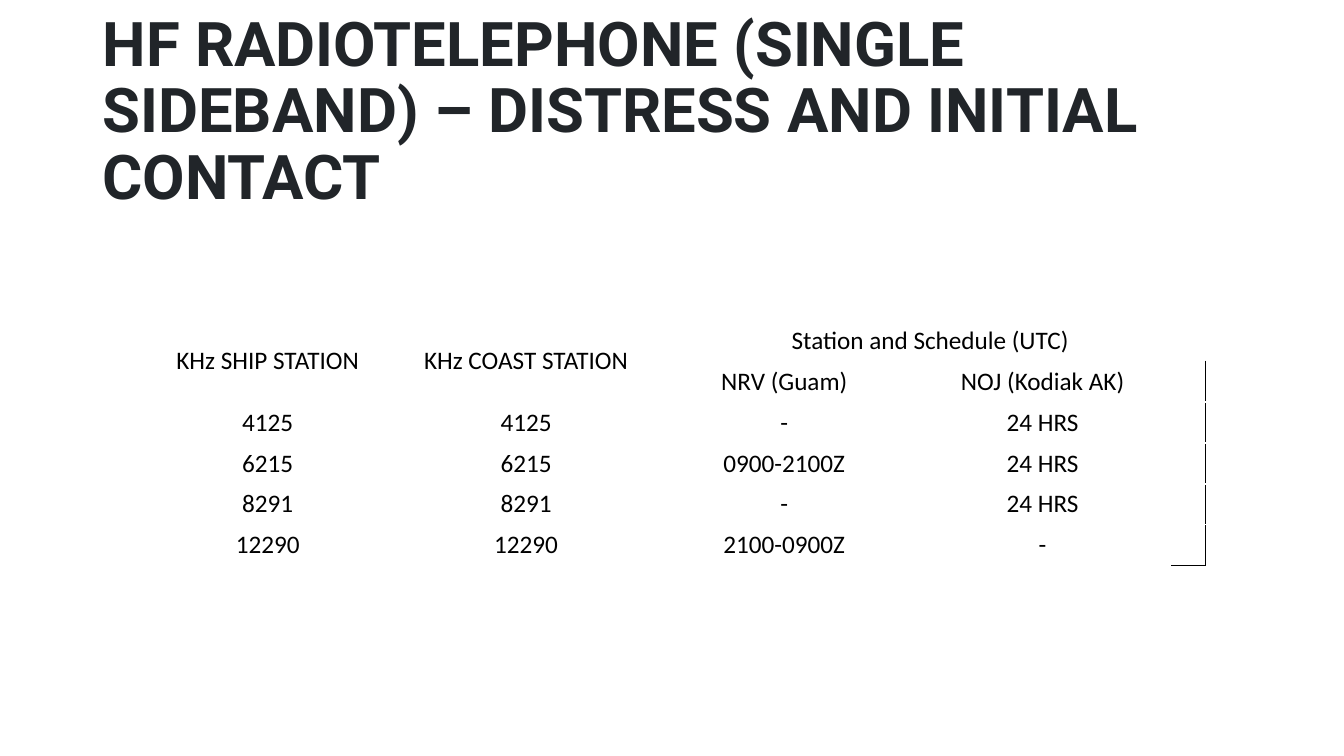
from lxml.etree import SubElement
from pptx import Presentation
from pptx.dml.color import RGBColor
from pptx.enum.text import MSO_ANCHOR, MSO_AUTO_SIZE, PP_ALIGN
from pptx.oxml.ns import qn
from pptx.util import Pt

COLORS = {"heading": "212529", "text": "000000", "cell": "FFFFFF", "border": "000000"}
HEADING_FONT = {"name": "Roboto", "size": Pt(44), "bold": True}
CELL_FONT = {"name": "Calibri", "size": Pt(18), "bold": False}

SCHEDULE = [
    ["KHz SHIP STATION", "KHz COAST STATION", "Station and Schedule (UTC)", "", ""],
    ["", "", "NRV (Guam)", "NOJ (Kodiak AK)", ""],
    ["4125", "4125", "-", "24 HRS", ""],
    ["6215", "6215", "0900-2100Z", "24 HRS", ""],
    ["8291", "8291", "-", "24 HRS", ""],
    ["12290", "12290", "2100-0900Z", "-", ""],
]
HEADER_ROWS = 2
MERGES = [((0, 0), (1, 0)), ((0, 1), (1, 1)), ((0, 2), (0, 4))]


class SlideBuilder:
    SCALE = 9525  # EMU per px, 96 px to the inch

    def __init__(self, width, height):
        self.deck = Presentation()
        self.deck.slide_width, self.deck.slide_height = self.px(width), self.px(height)
        self.slide = self.deck.slides.add_slide(self.deck.slide_layouts[5])

    def px(self, length):
        return length * self.SCALE

    def apply(self, target, values):
        for key, value in values.items():
            setattr(target, key, value)

    def style_font(self, font, values, color):
        self.apply(font, values)
        font.color.rgb = RGBColor.from_string(COLORS[color])

    def heading(self, text, left, top, width, height):
        title = self.slide.shapes.title
        self.apply(title, {"left": self.px(left), "top": self.px(top),
                           "width": self.px(width), "height": self.px(height)})
        self.apply(title.text_frame, {"text": text, "word_wrap": True,
                                      "auto_size": MSO_AUTO_SIZE.NONE,
                                      "vertical_anchor": MSO_ANCHOR.MIDDLE})
        paragraph = title.text_frame.paragraphs[0]
        self.apply(paragraph, {"alignment": PP_ALIGN.LEFT, "line_spacing": 0.9})
        self.style_font(paragraph.runs[0].font, HEADING_FONT, "heading")

    def border(self, cell, sides):
        properties = cell._tc.get_or_add_tcPr()
        for position, side in enumerate(sides):
            line = SubElement(properties, qn(f"a:{side}"), w=str(Pt(1)))
            fill = SubElement(line, qn("a:solidFill"))
            SubElement(fill, qn("a:srgbClr"), val=COLORS["border"])
            properties.insert(position, line)

    def fill_cell(self, cell, text, anchor):
        cell.text = text
        cell.vertical_anchor = anchor
        cell.fill.solid()
        cell.fill.fore_color.rgb = RGBColor.from_string(COLORS["cell"])
        paragraph = cell.text_frame.paragraphs[0]
        paragraph.alignment = PP_ALIGN.CENTER
        self.style_font(paragraph.font, CELL_FONT, "text")
        for run in paragraph.runs:
            self.style_font(run.font, CELL_FONT, "text")

    def table(self, rows, merges, left, top, widths, row_height):
        table = self.slide.shapes.add_table(
            len(rows), len(widths), self.px(left), self.px(top),
            self.px(sum(widths)), self.px(row_height * len(rows))).table
        self.apply(table, {"first_row": False, "horz_banding": False})
        for column, width in zip(table.columns, widths):
            column.width = self.px(width)
        for row_index, row in enumerate(rows):
            table.rows[row_index].height = self.px(row_height)
            anchor = MSO_ANCHOR.MIDDLE if row_index < HEADER_ROWS else MSO_ANCHOR.TOP
            for column_index, text in enumerate(row):
                self.fill_cell(table.cell(row_index, column_index), text, anchor)
        for start, end in merges:
            table.cell(*start).merge(table.cell(*end))
        return table


def main():
    builder = SlideBuilder(1280, 720)

    # Heading
    builder.heading("HF RADIOTELEPHONE (SINGLE SIDEBAND) – DISTRESS AND INITIAL CONTACT",
                    88, 38, 1104, 139)

    # Frequency schedule
    schedule = builder.table(SCHEDULE, MERGES, 132, 305, [246] * 4 + [32], 39)

    # Narrow last column: no fill, ruled on the right and below
    for row_index in range(1, len(SCHEDULE)):
        margin_cell = schedule.cell(row_index, 4)
        margin_cell.fill.background()
        builder.border(margin_cell, ["lnR", "lnB"])

    builder.deck.save("out.pptx")


if __name__ == "__main__":
    main()
